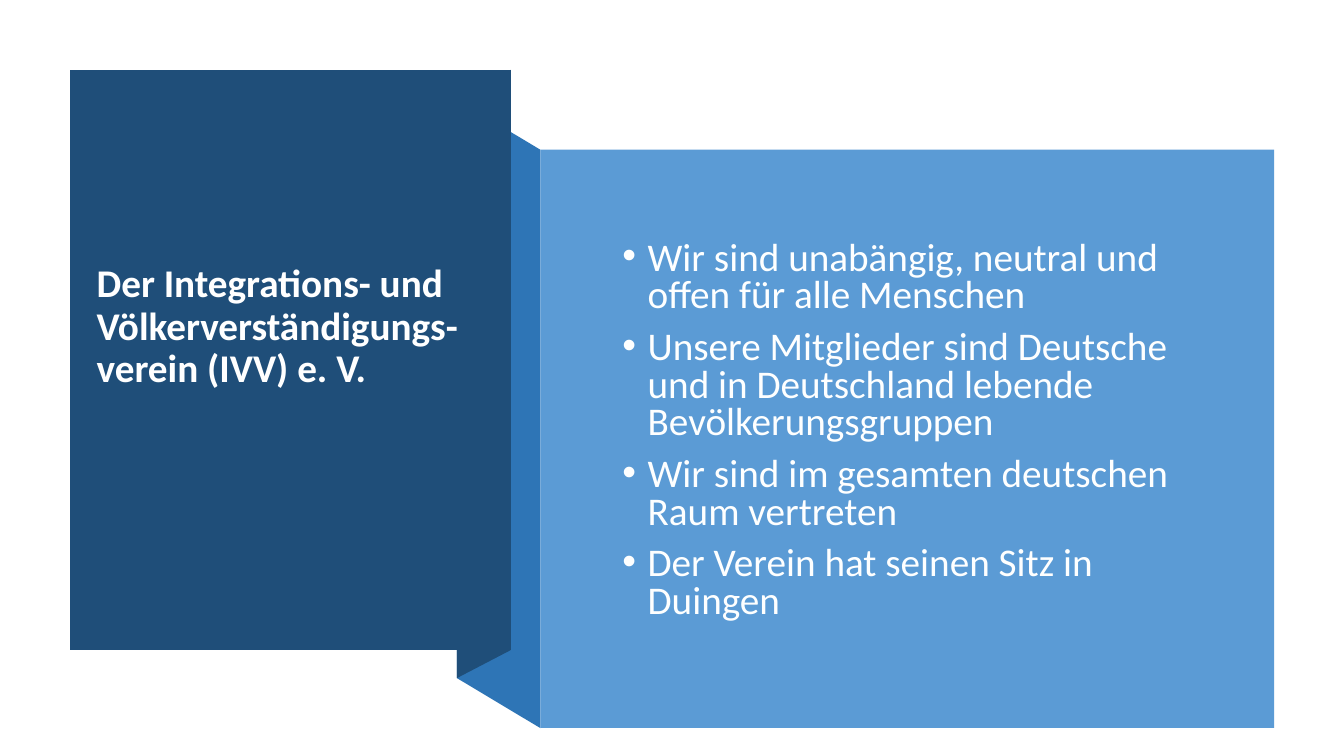
import dataclasses

import pptx
import pptx.dml.color
import pptx.enum.text
import pptx.oxml.ns
import pptx.util


@dataclasses.dataclass(frozen=True)
class Theme:
    font: str = "Calibri"
    text_size: int = 28
    paragraph_gap: int = 10
    front: str = "1F4E79"
    fold: str = "2E75B6"
    panel: str = "5B9BD5"
    title_text: str = "FFFFFF"
    body_text: str = "FEFFFF"


THEME = Theme()
WIDTH = pptx.util.Inches(13.33)
HEIGHT = pptx.util.Inches(7.5)

FRONT_LEFT, FOLD_LEFT, FRONT_RIGHT, PANEL_LEFT, PANEL_RIGHT = 5.2, 34, 38, 40.2, 94.8
FRONT_TOP, FOLD_TOP, PANEL_TOP = 9.25, 13.2, 19.8
FRONT_BOTTOM, FOLD_BOTTOM, PANEL_BOTTOM = 86, 89.7, 96.3

TITLE = "Der Integrations- und Völkerverständigungs- verein (IVV) e. V."
STATEMENTS = [
    "Wir sind unabängig, neutral und offen für alle Menschen",
    "Unsere Mitglieder sind Deutsche und in Deutschland lebende Bevölkerungsgruppen",
    "Wir sind im gesamten deutschen Raum vertreten",
    "Der Verein hat seinen Sitz in Duingen",
]


def across(percent):
    return round(WIDTH * percent / 100)


def down(percent):
    return round(HEIGHT * percent / 100)


def add_face(slide, corners, color):
    points = [(across(x), down(y)) for x, y in corners]
    builder = slide.shapes.build_freeform(*points[0], scale=1.0)
    builder.add_line_segments(points[1:], close=True)
    face = builder.convert_to_shape()
    face.shadow.inherit = False
    face.fill.solid()
    face.fill.fore_color.rgb = pptx.dml.color.RGBColor.from_string(color)
    face.line.fill.background()


def add_panel(slide, left, top, right, bottom, color):
    panel = slide.shapes.add_shape(
        pptx.enum.shapes.MSO_SHAPE.RECTANGLE,
        across(left), down(top), across(right - left), down(bottom - top),
    )
    panel.shadow.inherit = False
    panel.fill.solid()
    panel.fill.fore_color.rgb = pptx.dml.color.RGBColor.from_string(color)
    panel.line.fill.background()


def add_text(slide, left, top, width, height, lines, color, spacing, bold=False):
    box = slide.shapes.add_textbox(across(left), down(top), across(width), down(height))
    frame = box.text_frame
    frame.word_wrap = True
    frame.vertical_anchor = pptx.enum.text.MSO_ANCHOR.MIDDLE
    frame.text = "\n".join(lines)
    for paragraph in frame.paragraphs:
        paragraph.line_spacing = spacing
        font = paragraph.runs[0].font
        font.name = THEME.font
        font.size = pptx.util.Pt(THEME.text_size)
        font.bold = bold
        font.color.rgb = pptx.dml.color.RGBColor.from_string(color)
    return frame


def add_bullets(frame):
    for paragraph in frame.paragraphs:
        paragraph.space_before = pptx.util.Pt(THEME.paragraph_gap)
        properties = paragraph._p.get_or_add_pPr()
        properties.set("marL", str(pptx.util.Inches(0.62)))
        properties.set("indent", str(pptx.util.Inches(-0.25)))
        for tag, name, value in (("a:buFont", "typeface", "Arial"), ("a:buChar", "char", "•")):
            bullet = pptx.oxml.ns.qn(tag)
            properties.append(properties.makeelement(bullet, {name: value}))


def main():
    presentation = pptx.Presentation()
    presentation.slide_width, presentation.slide_height = WIDTH, HEIGHT
    slide = presentation.slides.add_slide(presentation.slide_layouts[6])

    add_face(slide, [(PANEL_LEFT, PANEL_BOTTOM), (FOLD_LEFT, FOLD_BOTTOM),
                     (FOLD_LEFT, FOLD_TOP), (PANEL_LEFT, PANEL_TOP)], THEME.fold)
    add_face(slide, [(FRONT_RIGHT, FRONT_BOTTOM), (FOLD_LEFT, FOLD_BOTTOM),
                     (FOLD_LEFT, FOLD_TOP), (FRONT_RIGHT, FRONT_TOP)], THEME.front)
    add_face(slide, [(FRONT_LEFT, FRONT_TOP), (FRONT_RIGHT, FRONT_TOP),
                     (FRONT_RIGHT, FRONT_BOTTOM), (FRONT_LEFT, FRONT_BOTTOM)], THEME.front)
    add_text(slide, 6.45, 17.9, 28.6, 50.8, [TITLE], THEME.title_text, 0.9, bold=True)
    add_panel(slide, PANEL_LEFT, PANEL_TOP, PANEL_RIGHT, PANEL_BOTTOM, THEME.panel)
    statements = add_text(slide, 42.8, 25.5, 48.8, 63.2, STATEMENTS, THEME.body_text, 0.8)
    add_bullets(statements)

    presentation.save("out.pptx")


if __name__ == "__main__":
    main()
